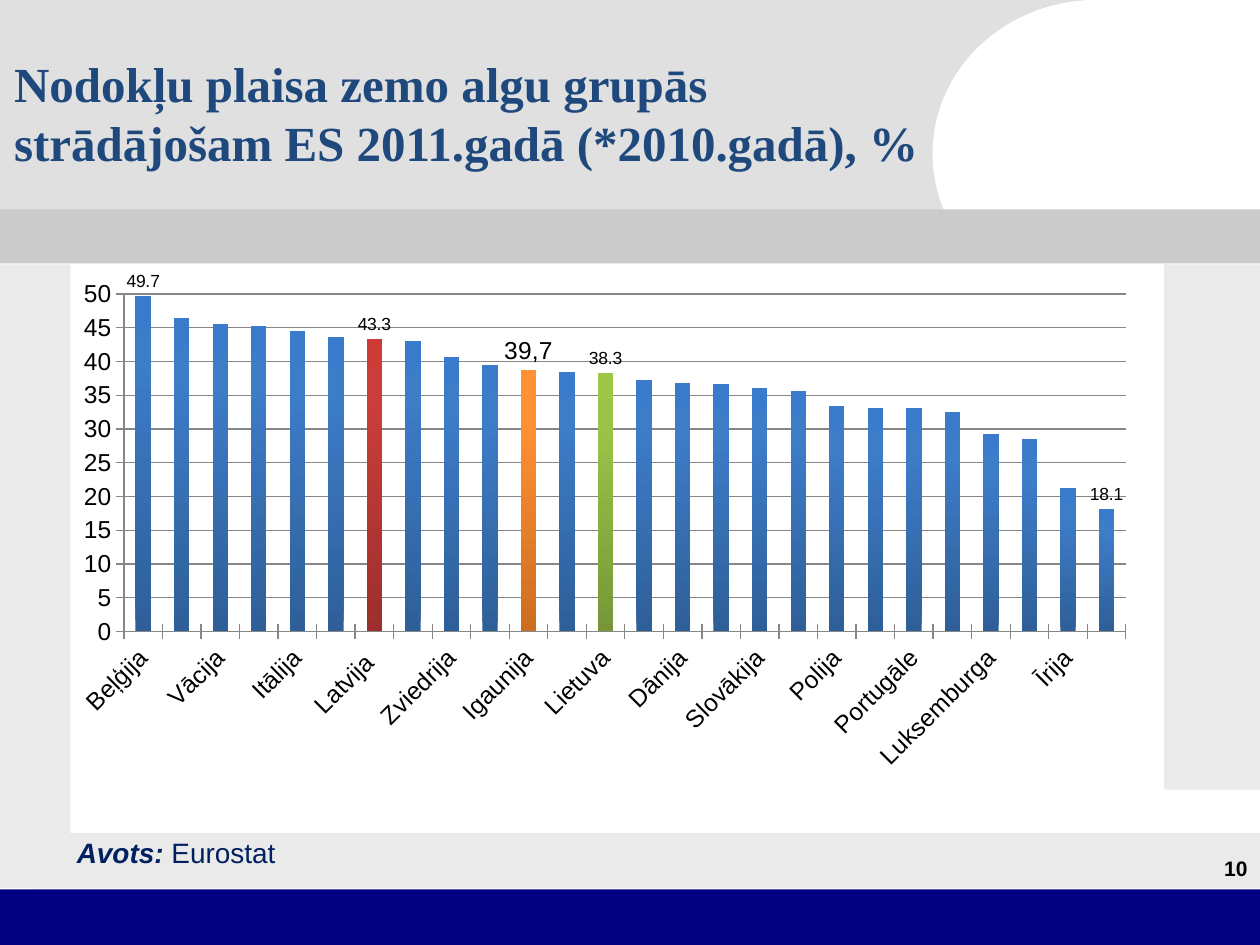
from copy import deepcopy

from pptx import Presentation
from pptx import util as u
from pptx.chart import data as cd
from pptx.dml.color import RGBColor
from pptx.enum import chart as ec, shapes, text
from pptx.oxml import parse_xml
from pptx.oxml.ns import nsdecls, qn

COLORS = {
    "header": "E0E0E0", "band": "CBCBCB", "side": "EAEAEA", "footer": "000080",
    "white": "FFFFFF", "title": "1F497D", "source": "002060", "black": "000000",
    "grid": "868686",
}
GRADIENTS = {
    "blue": ("2F5F99", "3D7CC7", "3A7CCB"),
    "red": ("9C2F2D", "CB3E3A", "CE3B37"),
    "orange": ("CC6E20", "FF9034", "FF9136"),
    "green": ("779737", "9BC348", "9DC746"),
}
BACKDROP = [
    ("RECTANGLE", "header", (0, 0, 23.09, 4.29)),
    ("OVAL", "white", (18.8, 0, 6.6, 6.2)),
    ("RECTANGLE", "side", (0, 5.33, 1.42, 12.57)),
    ("RECTANGLE", "side", (0.66, 16.79, 24.74, 1.12)),
    ("RECTANGLE", "footer", (0, 17.93, 25.4, 1.12)),
    ("RECTANGLE", "side", (23.47, 5.33, 1.93, 10.59)),
    ("RECTANGLE", "white", (21.89, 0, 3.51, 5.13)),
    ("RECTANGLE", "band", (0, 4.22, 25.4, 1.09)),
]
WEDGE = {
    "Beļģija": 49.7, "Francija": 46.5, "Vācija": 45.6, "Ungārija": 45.2,
    "Itālija": 44.5, "Austrija": 43.7, "Latvija ": 43.3, "Rumānija*": 43.1,
    "Zviedrija": 40.7, "Čehija": 39.5, "Igaunija": 38.8, "Slovēnija": 38.5,
    "Lietuva": 38.3, "Somija": 37.2, "Dānija": 36.8, "Spānija": 36.6,
    "Slovākija": 36.1, "Grieķija": 35.6, "Polija": 33.4, "Nīderlande": 33.1,
    "Portugāle": 33.1, "Bulgārija*": 32.5, "Luksemburga": 29.2,
    "Lielbritānija": 28.5, "Īrija": 21.3, "Malta*": 18.1,
}
HIGHLIGHTS = {"Latvija ": "red", "Igaunija": "orange", "Lietuva": "green"}
LABELS = {"Beļģija": None, "Latvija ": None, "Igaunija": "39,7", "Lietuva": None, "Malta*": None}
PLOT = {"x": 0.055, "y": 0.081, "w": 0.927, "h": 0.58}


def rgb(name):
    return RGBColor.from_string(COLORS[name])


class Deck:
    font = "Arial"

    def __init__(self, prs):
        self.s = prs.slides.add_slide(prs.slide_layouts[5])

    def box(self, at):
        return [u.Cm(v) for v in at]

    def run(self, p, words, size, color, bold=False, italic=False, font=None):
        r = p.add_run()
        r.text = words
        r.font.name = font or self.font
        r.font.size = u.Pt(size)
        r.font.bold = bold
        r.font.italic = italic
        r.font.color.rgb = rgb(color)

    def shape(self, kind, color, at):
        sp = self.s.shapes.add_shape(shapes.MSO_SHAPE[kind], *self.box(at))
        sp.shadow.inherit = False
        sp.fill.solid()
        sp.fill.fore_color.rgb = rgb(color)
        sp.line.fill.background()

    def title(self, words, at):
        sp = self.s.shapes.title
        sp.left, sp.top, sp.width, sp.height = self.box(at)
        self.s.shapes._spTree.append(sp._element)
        tf = sp.text_frame
        tf.word_wrap = True
        tf.auto_size = text.MSO_AUTO_SIZE.NONE
        tf.vertical_anchor = text.MSO_ANCHOR.MIDDLE
        p = tf.paragraphs[0]
        p.alignment = text.PP_ALIGN.LEFT
        self.run(p, words, 28, "title", bold=True, font="Times New Roman")

    def text(self, at, size, color, runs, align=text.PP_ALIGN.LEFT, wrap=True):
        tf = self.s.shapes.add_textbox(*self.box(at)).text_frame
        tf.word_wrap = wrap
        p = tf.paragraphs[0]
        p.alignment = align
        for words, bold, italic in runs:
            self.run(p, words, size, color, bold, italic)

    def gradient(self, fill, name):
        fill.gradient()
        fill.gradient_angle = 90
        gs_list = fill.gradient_stops._gsLst
        gs_list.append(deepcopy(gs_list[-1]))
        for stop, color, pos in zip(fill.gradient_stops, GRADIENTS[name], (0, 0.8, 1)):
            stop.color.rgb = RGBColor.from_string(color)
            stop.position = pos

    def axis(self, axis):
        axis.major_tick_mark = ec.XL_TICK_MARK.CROSS
        axis.format.line.color.rgb = rgb("grid")
        axis.tick_labels.font.size = u.Pt(14)

    def plot_area(self, chart):
        area = chart._chartSpace.chart.plotArea
        for old in area.findall(qn("c:layout")):
            area.remove(old)
        sizes = "".join(f'<c:{k} val="{v}"/>' for k, v in PLOT.items())
        area.insert(0, parse_xml(
            f'<c:layout {nsdecls("c")}><c:manualLayout><c:layoutTarget val="inner"/>'
            f'<c:xMode val="edge"/><c:yMode val="edge"/>{sizes}</c:manualLayout></c:layout>'))

    def chart(self, at):
        data = cd.CategoryChartData()
        data.categories = list(WEDGE)
        data.add_series("Series 1", list(WEDGE.values()))
        chart = self.s.shapes.add_chart(
            ec.XL_CHART_TYPE.COLUMN_CLUSTERED, *self.box(at), data).chart
        chart.has_legend = False
        chart.has_title = False
        chart.font.name = self.font
        chart.font.size = u.Pt(14)
        chart.font.color.rgb = rgb("black")
        self.plot_area(chart)

        cat, val = chart.category_axis, chart.value_axis
        self.axis(cat)
        self.axis(val)
        cat._element.find(qn("c:txPr")).find(qn("a:bodyPr")).set("rot", "-2700000")
        cat._element.find(qn("c:noMultiLvlLbl")).addprevious(
            parse_xml(f'<c:tickLblSkip {nsdecls("c")} val="2"/>'))
        val.minimum_scale, val.maximum_scale, val.major_unit = 0, 50, 5
        val.tick_labels.number_format = "#,##0"
        val.tick_labels.number_format_is_linked = False
        val.has_major_gridlines = True
        val.major_gridlines.format.line.color.rgb = rgb("grid")

        plot = chart.plots[0]
        plot.gap_width = 150
        plot.vary_by_categories = False
        series = plot.series[0]
        series.invert_if_negative = False
        self.gradient(series.format.fill, "blue")
        names = list(WEDGE)
        for name, color in HIGHLIGHTS.items():
            self.gradient(series.points[names.index(name)].format.fill, color)
        for name, words in LABELS.items():
            label = series.points[names.index(name)].data_label
            if words:
                self.run(label.text_frame.paragraphs[0], words, 14, "black")
            else:
                label.font.size = u.Pt(10)
            label.position = ec.XL_LABEL_POSITION.OUTSIDE_END


def main():
    prs = Presentation()
    prs.slide_width, prs.slide_height = u.Cm(25.4), u.Cm(19.05)
    deck = Deck(prs)
    for kind, color, at in BACKDROP:
        deck.shape(kind, color, at)
    deck.title("Nodokļu plaisa zemo algu grupās strādājošam ES 2011.gadā (*2010.gadā), %",
               (0.03, 0.53, 19.33, 3.48))
    deck.text((19.66, 17.12, 5.74, 1.27), 12, "black", [("10", True, False)],
              align=text.PP_ALIGN.RIGHT)
    deck.chart((1.3, 4.98, 21.79, 11.73))
    deck.text((1.3, 16.71, 4.57, 0.94), 16, "source",
              [("Avots: ", True, True), ("Eurostat", False, False)], wrap=False)
    prs.save("out.pptx")


if __name__ == "__main__":
    main()
